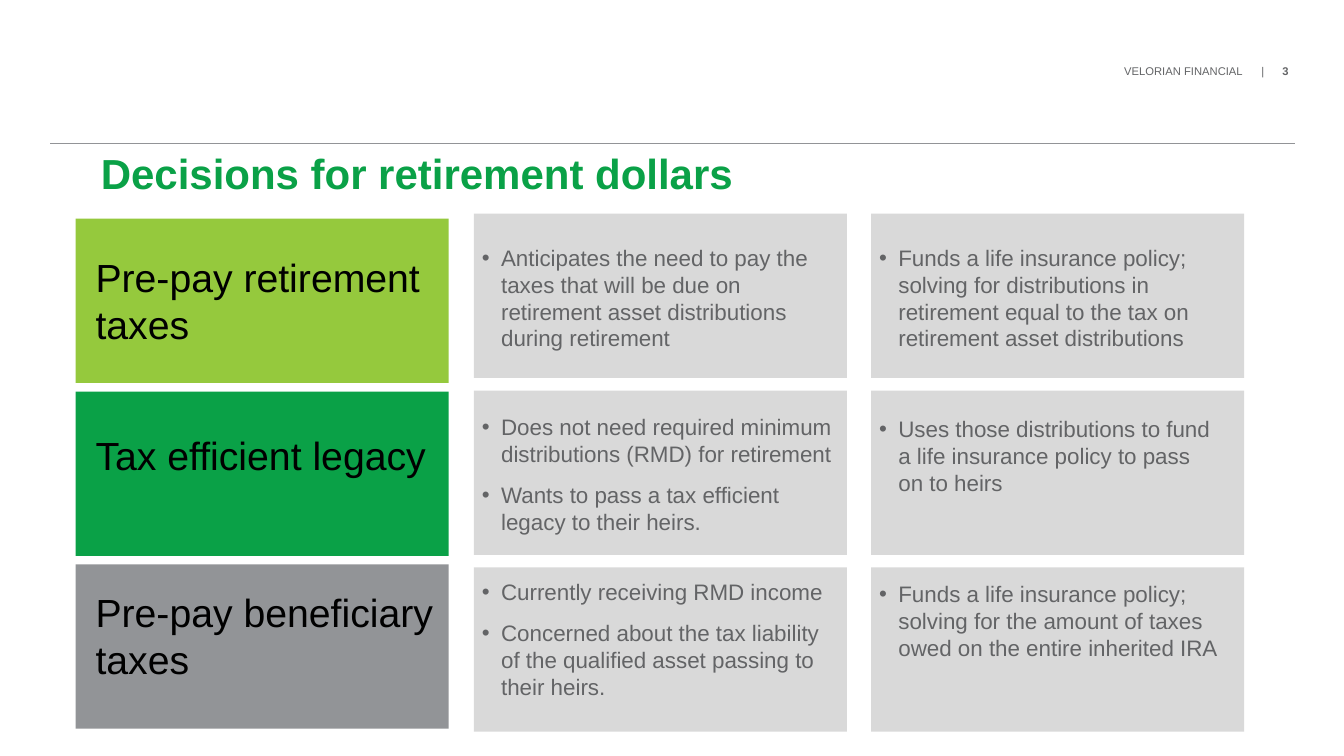
"""Build a slide that sets out three decisions for retirement dollars."""
from lxml import etree
from pptx import Presentation
from pptx.dml.color import RGBColor
from pptx.enum.shapes import MSO_CONNECTOR, MSO_SHAPE
from pptx.oxml.ns import qn
from pptx.util import Inches, Pt

RECTANGLE = MSO_SHAPE.RECTANGLE
STRAIGHT = MSO_CONNECTOR.STRAIGHT
LIME = RGBColor(0x95, 0xC9, 0x3D)
GREEN = RGBColor(0x0A, 0xA1, 0x47)
GRAY = RGBColor(0x92, 0x94, 0x97)
PALE = RGBColor(0xD9, 0xD9, 0xD9)
SLATE = RGBColor(0x63, 0x64, 0x66)
BLACK = RGBColor(0, 0, 0)

TITLE = "Decisions for retirement dollars"
COMPANY = "VELORIAN FINANCIAL"
PAGE_NUMBER = "3"
DECISIONS = [
    {
        "label": "Pre-pay retirement taxes", "fill": LIME, "label_top": 2.46,
        "details": [
            (2.42, 3.52, ["Anticipates the need to pay the taxes that will be due on "
                          "retirement asset distributions during retirement"]),
            (2.42, 3.52, ["Funds a life insurance policy; solving for distributions in "
                          "retirement equal to the tax on retirement asset distributions"]),
        ],
    },
    {
        "label": "Tax efficient legacy", "fill": GREEN, "label_top": 4.23,
        "details": [
            (4.1, 3.52, ["Does not need required minimum distributions (RMD) for retirement",
                         "Wants to pass a tax efficient legacy to their heirs."]),
            (4.12, 3.3, ["Uses those distributions to fund a life insurance policy "
                         "to pass on to heirs"]),
        ],
    },
    {
        "label": "Pre-pay beneficiary taxes", "fill": GRAY, "label_top": 5.79,
        "details": [
            (5.74, 3.52, ["Currently receiving RMD income",
                          "Concerned about the tax liability of the qualified asset "
                          "passing to their heirs."]),
            (5.76, 3.52, ["Funds a life insurance policy; solving for the amount of taxes "
                          "owed on the entire inherited IRA"]),
        ],
    },
]

CARD_WIDTH, CARD_HEIGHT = 3.7, 1.63
LABEL_LEFT, LABEL_TOP, LABEL_PITCH = 0.75, 2.17, 1.715
DETAIL_LEFT, DETAIL_TOP, DETAIL_PITCH = 4.7, 2.12, 1.755
COLUMN_PITCH = 3.94
LABEL_INDENT, DETAIL_INDENT = 0.1, 0.08
BULLET_INDENT = 0.19
COMPANY_TABS = (1.36, 1.57)

TITLE_FONT = {"name": "Arial", "size": Pt(30), "bold": True}
LABEL_FONT = {"name": "Arial", "size": Pt(28)}
DETAIL_FONT = {"name": "Arial", "size": Pt(16)}
COMPANY_FONT = {"name": "Arial", "size": Pt(8)}


def set_font(font, values, color):
    for name, value in values.items():
        setattr(font, name, value)
    font.color.rgb = color


def add_card(page, left, top, fill):
    card = page.shapes.add_shape(RECTANGLE, Inches(left), Inches(top),
                                 Inches(CARD_WIDTH), Inches(CARD_HEIGHT))
    card.shadow.inherit = False
    card.fill.solid()
    card.fill.fore_color.rgb = fill
    card.line.fill.background()


def add_text(page, place, lines, values, color, inset=0.0, wrap=True):
    box = page.shapes.add_textbox(*map(Inches, place))
    frame = box.text_frame
    frame.word_wrap = wrap
    frame.margin_left = frame.margin_right = Inches(inset)
    frame.margin_top = frame.margin_bottom = Inches(inset / 2)
    frame.text = "\n".join(lines)
    for para in frame.paragraphs:
        for span in para.runs:
            set_font(span.font, values, color)
    return frame


def add_bullets(frame):
    for index, para in enumerate(frame.paragraphs):
        if index:
            para.space_before = Pt(10)
        properties = para._p.get_or_add_pPr()
        properties.set("marL", str(Inches(BULLET_INDENT)))
        properties.set("indent", str(-Inches(BULLET_INDENT)))
        etree.SubElement(properties, qn("a:buFont"), typeface="Arial")
        etree.SubElement(properties, qn("a:buChar"), char="•")


def add_header(page):
    frame = add_text(page, (11.15, 0.64, 1.64, 0.15), [f"{COMPANY}\t|\t"],
                     COMPANY_FONT, SLATE, wrap=False)
    para = frame.paragraphs[0]
    tabs = etree.SubElement(para._p.get_or_add_pPr(), qn("a:tabLst"))
    for position in COMPANY_TABS:
        etree.SubElement(tabs, qn("a:tab"), pos=str(Inches(position)), algn="l")
    number = para.add_run()
    number.text = PAGE_NUMBER
    set_font(number.font, {**COMPANY_FONT, "bold": True}, SLATE)

    rule = page.shapes.add_connector(STRAIGHT, Inches(0.5), Inches(1.42),
                                     Inches(12.84), Inches(1.42))
    rule.line.color.rgb = GRAY
    rule.line.width = Pt(0.5)
    etree.SubElement(rule._element.spPr, qn("a:effectLst"))

    title = add_text(page, (1, 1.53, 11.33, 0.5), [TITLE], TITLE_FONT, GREEN)
    title.paragraphs[0].line_spacing = Pt(31)


def add_decision(page, row, decision):
    add_card(page, LABEL_LEFT, LABEL_TOP + row * LABEL_PITCH, decision["fill"])
    add_text(page, (LABEL_LEFT + LABEL_INDENT, decision["label_top"], 3.56, 1.34),
             [decision["label"]], LABEL_FONT, BLACK, inset=0.1)
    for column, (top, width, lines) in enumerate(decision["details"]):
        left = DETAIL_LEFT + column * COLUMN_PITCH
        add_card(page, left, DETAIL_TOP + row * DETAIL_PITCH, PALE)
        frame = add_text(page, (left + DETAIL_INDENT, top, width, 1.15),
                         lines, DETAIL_FONT, SLATE)
        add_bullets(frame)


def main():
    deck = Presentation()
    deck.slide_width, deck.slide_height = Inches(13.33), Inches(7.5)
    page = deck.slides.add_slide(deck.slide_layouts[6])
    add_header(page)
    for row, decision in enumerate(DECISIONS):
        add_decision(page, row, decision)
    deck.save("out.pptx")


if __name__ == "__main__":
    main()
